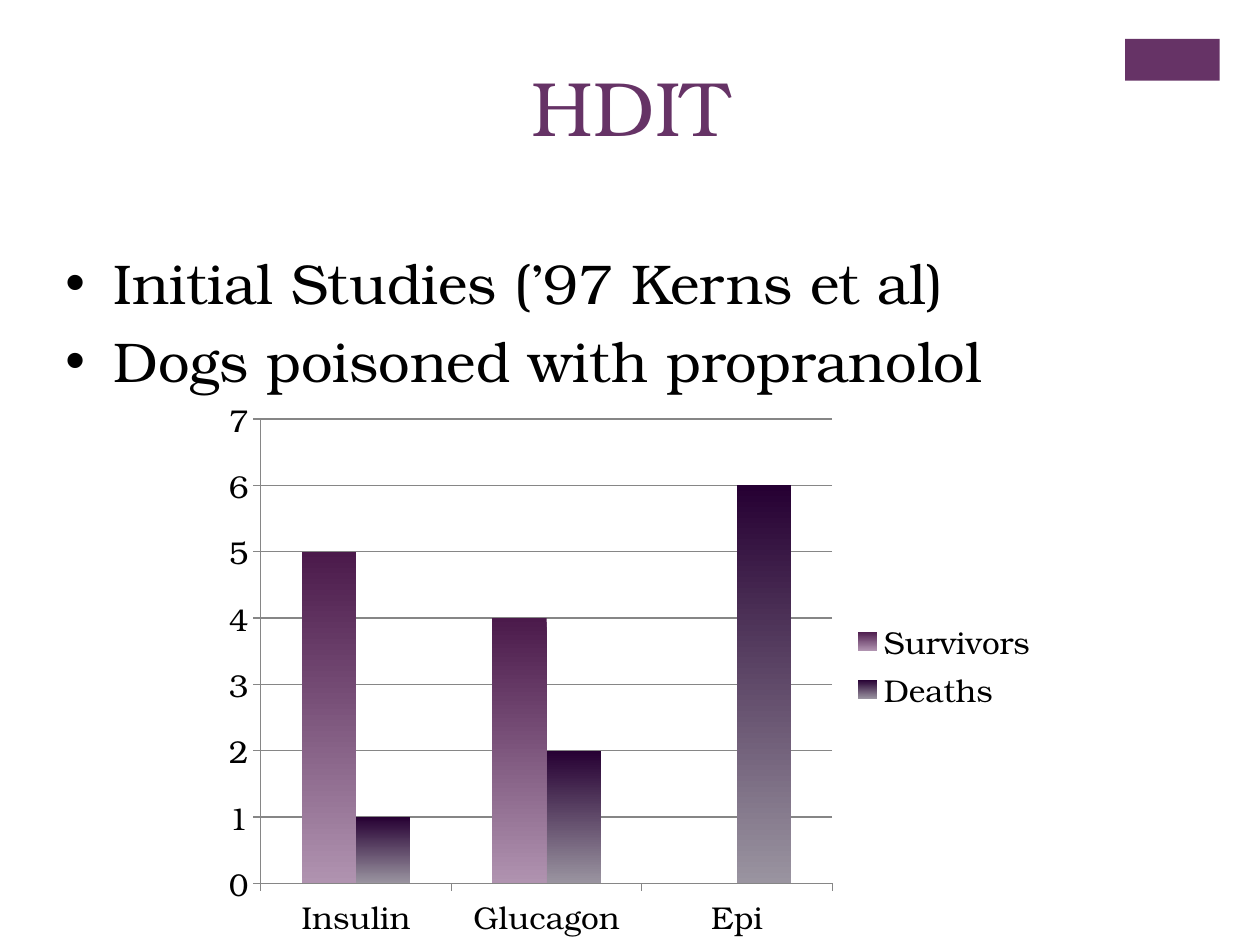
from lxml import etree
from pptx import Presentation
from pptx.chart.data import CategoryChartData
from pptx.dml.color import RGBColor
from pptx.enum.chart import XL_CHART_TYPE, XL_LEGEND_POSITION, XL_TICK_MARK
from pptx.enum.shapes import MSO_SHAPE
from pptx.enum.text import MSO_ANCHOR, PP_ALIGN
from pptx.oxml import parse_xml
from pptx.oxml.ns import nsdecls, qn
from pptx.util import Inches, Pt

COLUMNS = XL_CHART_TYPE.COLUMN_CLUSTERED
LEGEND_RIGHT = XL_LEGEND_POSITION.RIGHT
TICK_OUT = XL_TICK_MARK.OUTSIDE
RECTANGLE = MSO_SHAPE.RECTANGLE
TOP = MSO_ANCHOR.TOP
CENTER = PP_ALIGN.CENTER
LEFT = PP_ALIGN.LEFT

FONT = "TeX Gyre Bonum"
PURPLE = RGBColor(0x66, 0x33, 0x66)
BLACK = RGBColor(0, 0, 0)
GRAY = RGBColor(0x86, 0x86, 0x86)
OUTCOMES = {
    "Survivors": ((5, 4, 0), RGBColor(0x4B, 0x1A, 0x4B), RGBColor(0xB0, 0x93, 0xB0)),
    "Deaths": ((1, 2, 6), RGBColor(0x26, 0x00, 0x33), RGBColor(0x9A, 0x94, 0xA0)),
}
TREATMENTS = ("Insulin", "Glucagon", "Epi")
PLOT_AREA = {"x": 0.06, "y": 0.06, "w": 0.68, "h": 0.83}


def apply_format(target, values):
    """Set each named attribute on the target."""
    for name, value in values.items():
        setattr(target, name, value)


def style_font(font, size, color):
    """Give a font the deck's typeface, a size and a colour."""
    apply_format(font, {"name": FONT, "size": Pt(size)})
    font.color.rgb = color


def add_accent(slide, box):
    """Place the solid corner block."""
    accent = slide.shapes.add_shape(RECTANGLE, *map(Inches, box))
    accent.shadow.inherit = False
    accent.fill.solid()
    accent.fill.fore_color.rgb = PURPLE
    accent.line.fill.background()


def add_lines(slide, box, lines, size, color, alignment):
    """Write one paragraph per line in a box and return the paragraphs."""
    frame = slide.shapes.add_textbox(*map(Inches, box)).text_frame
    apply_format(frame, {"word_wrap": True, "vertical_anchor": TOP})
    frame.text = "\n".join(lines)
    for paragraph in frame.paragraphs:
        paragraph.alignment = alignment
        style_font(paragraph.runs[0].font, size, color)
    return frame.paragraphs


def add_bullets(slide, box, lines):
    """Write a bulleted list with hanging indents."""
    for paragraph in add_lines(slide, box, lines, 32, BLACK, LEFT):
        paragraph.space_before = Pt(6.4)
        properties = paragraph._p.get_or_add_pPr()
        properties.set("marL", str(Inches(0.38)))
        properties.set("indent", str(Inches(-0.38)))
        etree.SubElement(properties, qn("a:buFont")).set("typeface", "Arial")
        etree.SubElement(properties, qn("a:buChar")).set("char", "•")


def fix_plot_area(chart):
    """Pin the inner plot area to fractions of the chart."""
    plot_area = chart._chartSpace.chart.plotArea
    for previous in plot_area.findall(qn("c:layout")):
        plot_area.remove(previous)
    modes = '<c:layoutTarget val="inner"/><c:xMode val="edge"/><c:yMode val="edge"/>'
    sizes = "".join(f'<c:{name} val="{value}"/>' for name, value in PLOT_AREA.items())
    plot_area.insert(0, parse_xml(
        f'<c:layout {nsdecls("c")}><c:manualLayout>{modes}{sizes}</c:manualLayout></c:layout>'
    ))


def add_outcome_chart(slide, box):
    """Chart survivors and deaths for each treatment."""
    outcome_data = CategoryChartData()
    outcome_data.categories = TREATMENTS
    for name, (counts, _, _) in OUTCOMES.items():
        outcome_data.add_series(name, counts)
    chart = slide.shapes.add_chart(COLUMNS, *map(Inches, box), outcome_data).chart
    apply_format(chart, {"has_title": False, "has_legend": True})
    apply_format(chart.legend, {"position": LEGEND_RIGHT, "include_in_layout": False})
    style_font(chart.font, 18, BLACK)
    fix_plot_area(chart)

    plot = chart.plots[0]
    apply_format(plot, {"gap_width": 150, "overlap": 0, "vary_by_categories": False})
    for series, (_, dark, light) in zip(plot.series, OUTCOMES.values()):
        series.invert_if_negative = False
        series.format.fill.gradient()
        series.format.fill.gradient_angle = 270
        for stop, color in zip(series.format.fill.gradient_stops, (dark, light)):
            stop.color.rgb = color

    counts_axis = chart.value_axis
    apply_format(counts_axis, {
        "minimum_scale": 0, "maximum_scale": 7, "major_unit": 1, "has_major_gridlines": True,
    })
    for axis in (chart.category_axis, counts_axis):
        axis.major_tick_mark = TICK_OUT
    for part in (chart.category_axis, counts_axis, counts_axis.major_gridlines):
        part.format.line.color.rgb = GRAY
        part.format.line.width = Pt(0.75)


def main():
    """Build and save the slide."""
    deck = Presentation()
    apply_format(deck, {"slide_width": Inches(10), "slide_height": Inches(7.5)})
    slide = deck.slides.add_slide(deck.slide_layouts[6])
    add_accent(slide, (8.93, 0.31, 0.75, 0.33))
    add_lines(slide, (0.88, 0.42, 8.25, 1.5), ["HDIT"], 44, PURPLE, CENTER)
    add_bullets(slide, (0.42, 1.92, 9.18, 5.14), [
        "Initial Studies (’97 Kerns et al)",
        "Dogs poisoned with propranolol",
    ])
    add_outcome_chart(slide, (1.67, 3.06, 6.67, 4.44))
    deck.save("out.pptx")


if __name__ == "__main__":
    main()
